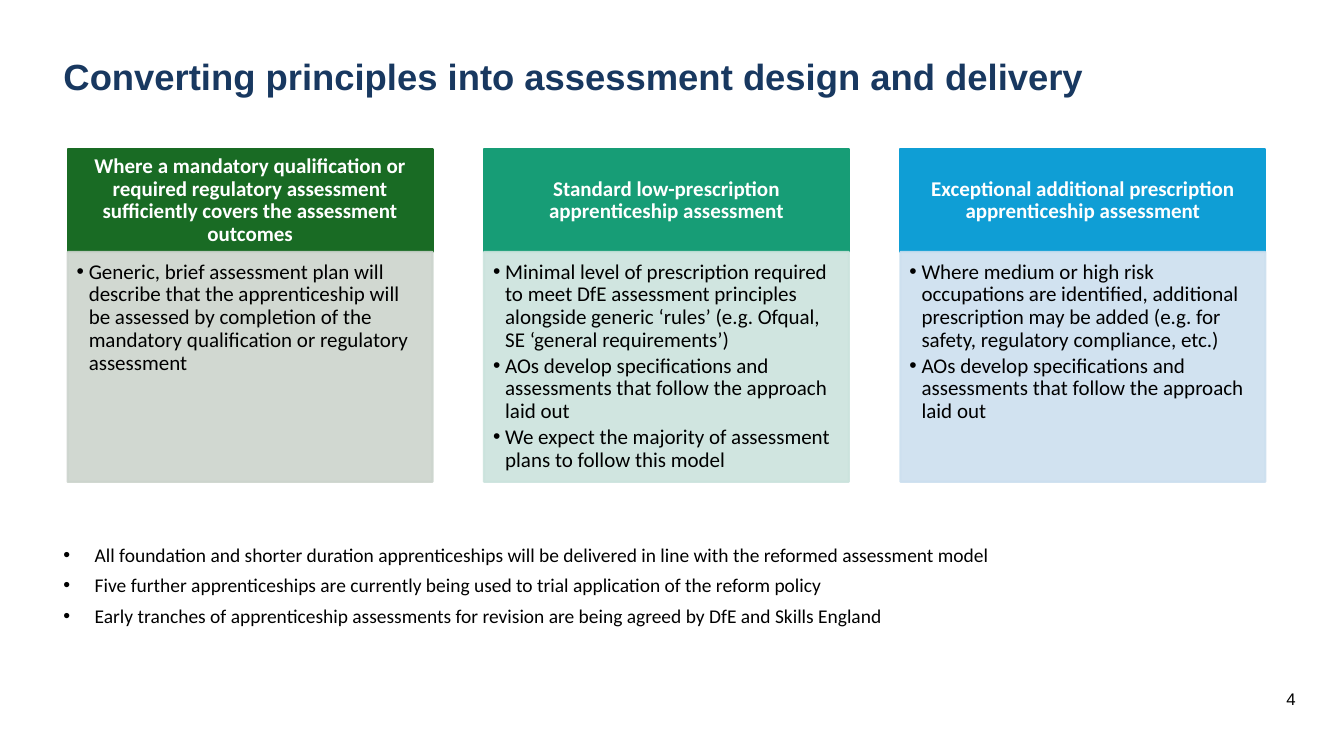
from dataclasses import dataclass

from lxml import etree
from pptx import Presentation
from pptx.dml.color import RGBColor
from pptx.enum.shapes import MSO_SHAPE
from pptx.enum.text import MSO_ANCHOR, PP_ALIGN
from pptx.oxml.ns import qn
from pptx.util import Inches, Pt

RECT = MSO_SHAPE.RECTANGLE
TOP, MIDDLE = MSO_ANCHOR.TOP, MSO_ANCHOR.MIDDLE
LEFT, CENTER, RIGHT = PP_ALIGN.LEFT, PP_ALIGN.CENTER, PP_ALIGN.RIGHT

COLORS = {
    "title": "183860", "text": "000000", "white": "FFFFFF",
    "green": "196B24", "pale_green": "CCD4CD",
    "teal": "179D76", "pale_teal": "CBE3DD",
    "blue": "0F9ED5", "pale_blue": "CCDFEF",
}

COLUMN_LEFT, COLUMN_STEP, COLUMN_WIDTH = 0.67, 4.13, 3.62
HEADER_TOP, HEADER_HEIGHT, BODY_HEIGHT = 1.48, 1.02, 2.28


@dataclass(frozen=True)
class TextStyle:
    size: float
    font: str = "Calibri"
    color: str = "text"
    bold: bool = False
    align: PP_ALIGN = LEFT
    anchor: MSO_ANCHOR = TOP
    margins: tuple[float, ...] = (0, 0, 0, 0)
    line_spacing: float = 1.0
    space_after: float = 0
    bullet_indent: float = 0


@dataclass(frozen=True)
class Column:
    header: str
    color: str
    points: list[str]


TITLE = TextStyle(26, font="Arial", color="title", bold=True)
NOTES = TextStyle(13.9, margins=(0, 0.31, 0, 0), line_spacing=0.8,
                  space_after=8.5, bullet_indent=0.31)
PAGE_NUMBER = TextStyle(12, font="Arial", align=RIGHT, anchor=MIDDLE)
HEADER = TextStyle(15, color="white", bold=True, align=CENTER, anchor=MIDDLE,
                   margins=(0.12, 0.07, 0.12, 0.07), line_spacing=0.9)
BODY = TextStyle(15, margins=(0.09, 0.09, 0.12, 0.13), line_spacing=0.9,
                 space_after=2.25, bullet_indent=0.12)

AO_POINT = "AOs develop specifications and assessments that follow the approach laid out"
COLUMNS = [
    Column(
        "Where a mandatory qualification or required regulatory assessment "
        "sufficiently covers the assessment outcomes",
        "green",
        ["Generic, brief assessment plan will describe that the apprenticeship will be "
         "assessed by completion of the mandatory qualification or regulatory assessment"],
    ),
    Column(
        "Standard low-prescription apprenticeship assessment",
        "teal",
        ["Minimal level of prescription required to meet DfE assessment principles "
         "alongside generic ‘rules’ (e.g. Ofqual, SE ‘general requirements’)",
         AO_POINT,
         "We expect the majority of assessment plans to follow this model"],
    ),
    Column(
        "Exceptional additional prescription apprenticeship assessment",
        "blue",
        ["Where medium or high risk occupations are identified, additional prescription "
         "may be added (e.g. for safety, regulatory compliance, etc.)",
         AO_POINT],
    ),
]
NOTE_POINTS = [
    "All foundation and shorter duration apprenticeships will be delivered in line "
    "with the reformed assessment model",
    "Five further apprenticeships are currently being used to trial application "
    "of the reform policy",
    "Early tranches of apprenticeship assessments for revision are being agreed "
    "by DfE and Skills England",
]


def rgb(name: str) -> RGBColor:
    return RGBColor.from_string(COLORS[name])


def add_bullet(p, indent: float) -> None:
    pPr = p._p.get_or_add_pPr()
    pPr.set("marL", str(Inches(indent)))
    pPr.set("indent", str(-Inches(indent)))
    etree.SubElement(pPr, qn("a:buFont")).set("typeface", "Arial")
    etree.SubElement(pPr, qn("a:buChar")).set("char", "•")


def write_text(sp, lines: list[str], style: TextStyle) -> None:
    tf = sp.text_frame
    tf.word_wrap = True
    tf.vertical_anchor = style.anchor
    (tf.margin_left, tf.margin_top,
     tf.margin_right, tf.margin_bottom) = map(Inches, style.margins)
    tf.text = "\n".join(lines)
    for p in tf.paragraphs:
        p.alignment = style.align
        p.line_spacing = style.line_spacing
        p.space_after = Pt(style.space_after)
        if style.bullet_indent:
            add_bullet(p, style.bullet_indent)
        for r in p.runs:
            r.font.name = style.font
            r.font.size = Pt(style.size)
            r.font.bold = style.bold
            r.font.color.rgb = rgb(style.color)


def add_text(s, box: tuple[float, ...], lines: list[str], style: TextStyle) -> None:
    write_text(s.shapes.add_textbox(*map(Inches, box)), lines, style)


def add_panel(s, box: tuple[float, ...], color: str, lines: list[str],
              style: TextStyle, opacity: int = 100) -> None:
    """Draw a filled rectangle with text; opacity is a percentage."""
    sp = s.shapes.add_shape(RECT, *map(Inches, box))
    sp.shadow.inherit = False
    sp.fill.solid()
    sp.fill.fore_color.rgb = rgb(color)
    sp.line.color.rgb = rgb(color)
    sp.line.width = Pt(1.5)
    if opacity < 100:
        for clr in sp._element.spPr.iter(qn("a:srgbClr")):
            etree.SubElement(clr, qn("a:alpha")).set("val", str(opacity * 1000))
    write_text(sp, lines, style)


def add_column(s, index: int, column: Column) -> None:
    left = COLUMN_LEFT + index * COLUMN_STEP
    add_panel(s, (left, HEADER_TOP, COLUMN_WIDTH, HEADER_HEIGHT),
              column.color, [column.header], HEADER)
    add_panel(s, (left, HEADER_TOP + HEADER_HEIGHT, COLUMN_WIDTH, BODY_HEIGHT),
              f"pale_{column.color}", column.points, BODY, opacity=90)


def main() -> None:
    prs = Presentation()
    prs.slide_width, prs.slide_height = Inches(13.33), Inches(7.5)
    s = prs.slides.add_slide(prs.slide_layouts[6])
    add_text(s, (0.63, 0.54, 12.04, 0.79),
             ["Converting principles into assessment design and delivery"], TITLE)
    for index, column in enumerate(COLUMNS):
        add_column(s, index, column)
    add_text(s, (0.63, 5.12, 12.04, 1.13), NOTE_POINTS, NOTES)
    add_text(s, (12.46, 6.83, 0.39, 0.2), ["4"], PAGE_NUMBER)
    prs.save("out.pptx")


if __name__ == "__main__":
    main()
